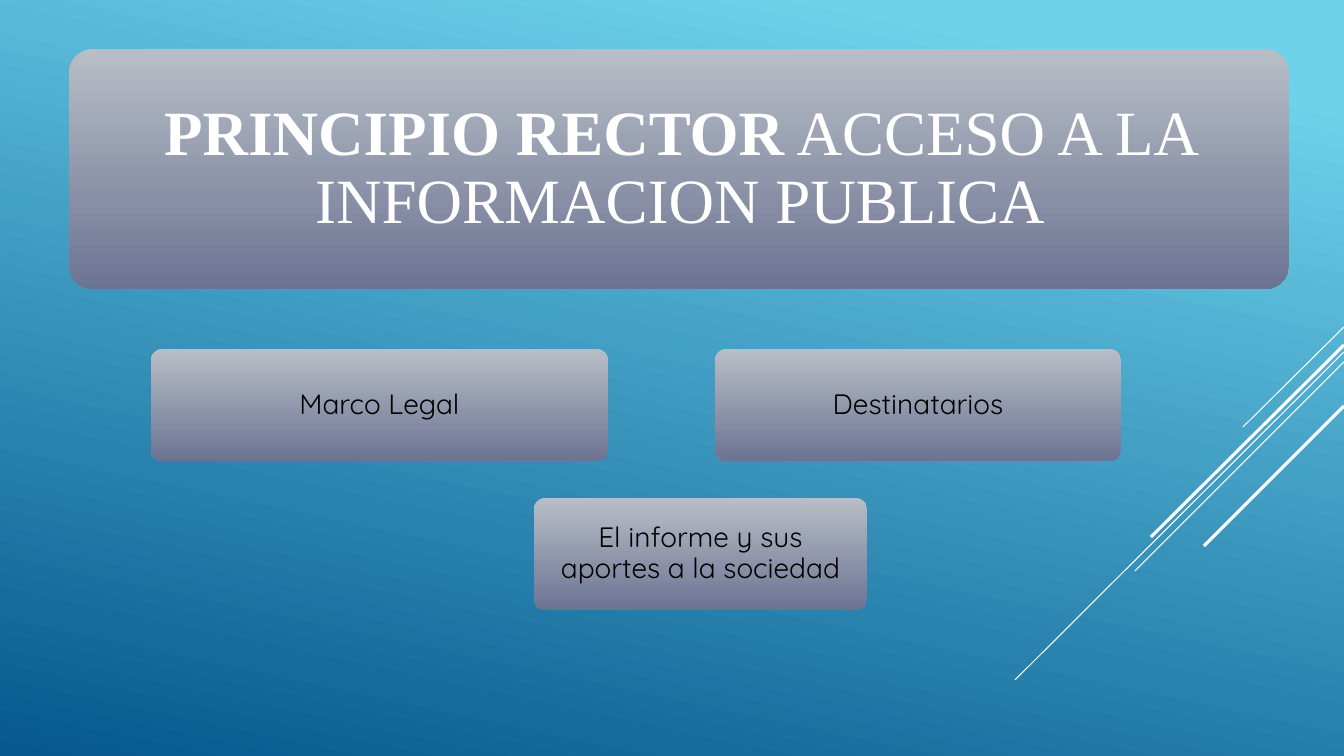
from dataclasses import dataclass

from lxml import etree
from pptx import Presentation
from pptx.dml.color import RGBColor
from pptx.dml.fill import FillFormat
from pptx.enum.shapes import MSO_CONNECTOR, MSO_SHAPE
from pptx.enum.text import MSO_ANCHOR, MSO_AUTO_SIZE, PP_ALIGN
from pptx.oxml.ns import qn
from pptx.shapes.autoshape import Shape
from pptx.slide import Slide
from pptx.text.text import TextFrame
from pptx.util import Emu, Pt

STRAIGHT = MSO_CONNECTOR.STRAIGHT
ROUNDED = MSO_SHAPE.ROUNDED_RECTANGLE
MIDDLE = MSO_ANCHOR.MIDDLE
NO_AUTOFIT = MSO_AUTO_SIZE.NONE
CENTER = PP_ALIGN.CENTER

EMU_PER_PX = 914400 / 100.8
SLIDE_WIDTH, SLIDE_HEIGHT = 1344, 756
TITLE_FONT, TOPIC_FONT = "Times New Roman", "Quicksand"
WHITE, BLACK = "FFFFFF", "000000"
SKY, OCEAN = "6ED2EB", "06588E"
SILVER, SLATE = "B8BEC6", "6C7493"


@dataclass(frozen=True)
class Box:
    left: int
    top: int
    width: int
    height: int


@dataclass(frozen=True)
class Topic:
    text: str
    box: Box


@dataclass(frozen=True)
class Streak:
    """A line falling from the right slide edge to a lower left end."""

    edge_y: int
    end_x: int
    end_y: int
    weight: float


TITLE_PANEL = Box(69, 49, 1220, 240)
TITLE_TEXT = Box(77, 56, 1206, 226)
TOPICS = [
    Topic("Marco Legal", Box(151, 349, 457, 112)),
    Topic("El informe y sus aportes a la sociedad", Box(534, 498, 333, 112)),
    Topic("Destinatarios", Box(715, 349, 406, 112)),
]
STREAKS = [
    Streak(327, 1243, 427, 0.75),
    Streak(352, 1015, 680, 0.75),
    Streak(362, 1135, 571, 0.75),
    Streak(345, 1151, 537, 2.25),
    Streak(406, 1204, 546, 2.25),
]


def px(value: int) -> Emu:
    return Emu(round(value * EMU_PER_PX))


def color(value: str) -> RGBColor:
    return RGBColor.from_string(value)


def fill_gradient(
    fill: FillFormat, start: str, end: str, angle: int, start_position: float = 0
) -> None:
    """Fill from start to end; angle is in degrees clockwise from the right."""
    fill.gradient()
    fill.gradient_angle = 360 - angle
    first, last = fill.gradient_stops
    first.color.rgb, first.position = color(start), start_position
    last.color.rgb, last.position = color(end), 1


def add_streak(slide: Slide, streak: Streak) -> None:
    connector = slide.shapes.add_connector(
        STRAIGHT, px(SLIDE_WIDTH), px(streak.edge_y), px(streak.end_x), px(streak.end_y)
    )
    connector.line.color.rgb = color(WHITE)
    connector.line.width = Pt(streak.weight)
    properties = connector.element.find(qn("p:spPr"))
    etree.SubElement(properties, qn("a:effectLst"))


def add_panel(slide: Slide, box: Box) -> Shape:
    panel = slide.shapes.add_shape(
        ROUNDED, px(box.left), px(box.top), px(box.width), px(box.height)
    )
    panel.adjustments[0] = 0.1
    panel.shadow.inherit = False
    panel.line.fill.background()
    fill_gradient(panel.fill, SILVER, SLATE, 90)
    return panel


def format_text(
    frame: TextFrame, margin: int, font_name: str, size: int, font_color: str
) -> None:
    frame.word_wrap = True
    frame.auto_size = NO_AUTOFIT
    frame.vertical_anchor = MIDDLE
    frame.margin_left = frame.margin_right = px(margin)
    frame.margin_top = frame.margin_bottom = px(margin)
    paragraph = frame.paragraphs[0]
    paragraph.alignment = CENTER
    paragraph.line_spacing = 0.9
    paragraph.font.name = font_name
    paragraph.font.size = Pt(size)
    paragraph.font.color.rgb = color(font_color)


def add_title(slide: Slide) -> None:
    add_panel(slide, TITLE_PANEL)
    title = slide.shapes.title
    title.left, title.top = px(TITLE_TEXT.left), px(TITLE_TEXT.top)
    title.width, title.height = px(TITLE_TEXT.width), px(TITLE_TEXT.height)
    paragraph = title.text_frame.paragraphs[0]
    for text, bold in (
        ("PRINCIPIO RECTOR", True),
        (" ACCESO A LA INFORMACION PUBLICA", False),
    ):
        run = paragraph.add_run()
        run.text = text
        run.font.bold = bold
    format_text(title.text_frame, 19, TITLE_FONT, 45, WHITE)
    # Appending the placeholder again raises it above its panel.
    slide.shapes.element.append(title.element)


def add_topic(slide: Slide, topic: Topic) -> None:
    panel = add_panel(slide, topic.box)
    panel.text_frame.text = topic.text
    format_text(panel.text_frame, 11, TOPIC_FONT, 20, BLACK)


def main() -> None:
    presentation = Presentation()
    presentation.slide_width = px(SLIDE_WIDTH)
    presentation.slide_height = px(SLIDE_HEIGHT)
    title_only = presentation.slide_layouts.get_by_name("Title Only")
    slide = presentation.slides.add_slide(title_only)
    fill_gradient(slide.background.fill, SKY, OCEAN, 102, start_position=0.1)
    for streak in STREAKS:
        add_streak(slide, streak)
    add_title(slide)
    for topic in TOPICS:
        add_topic(slide, topic)
    presentation.save("out.pptx")


if __name__ == "__main__":
    main()
